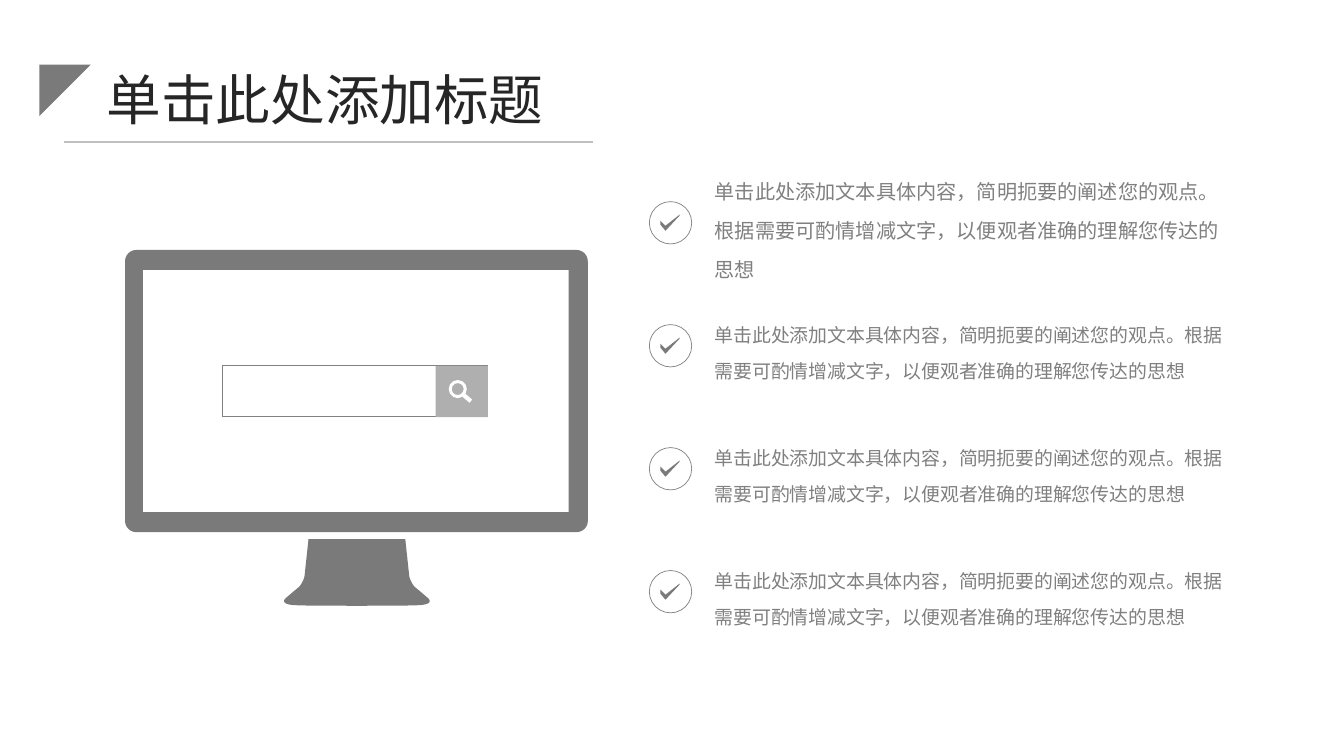
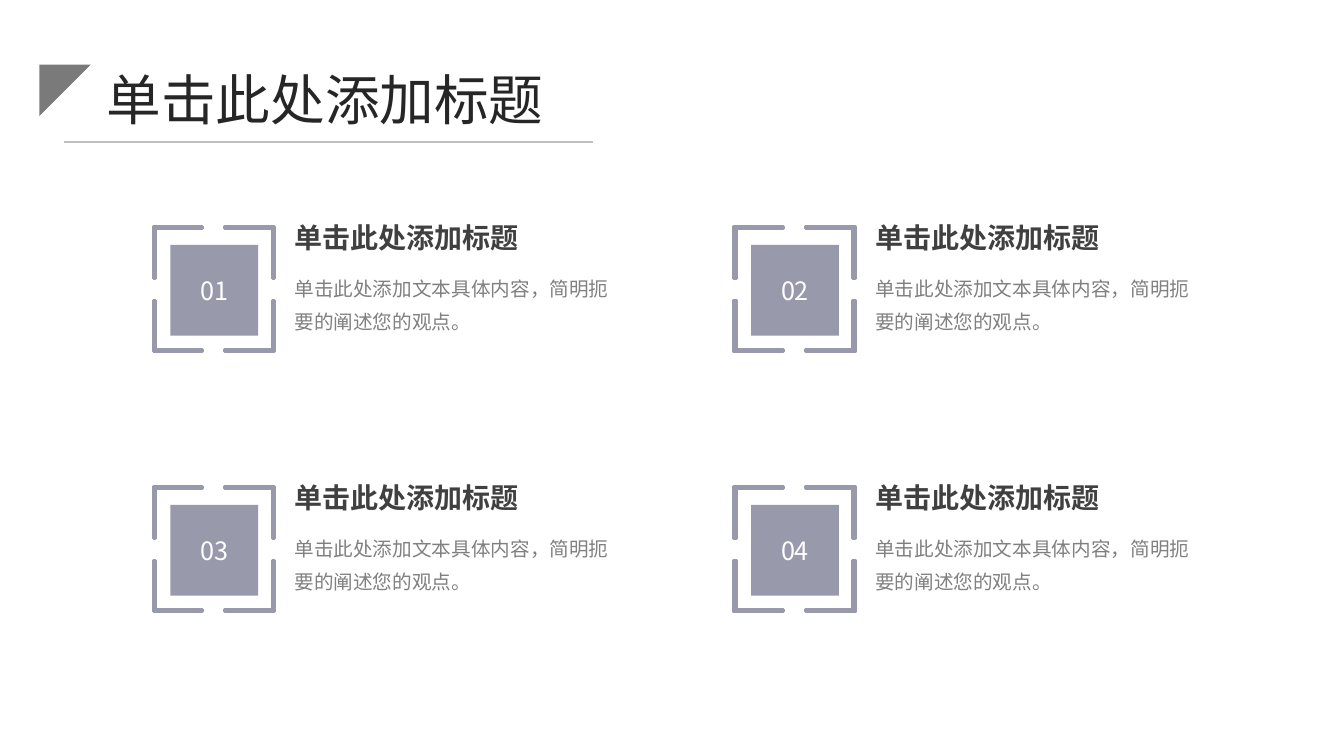
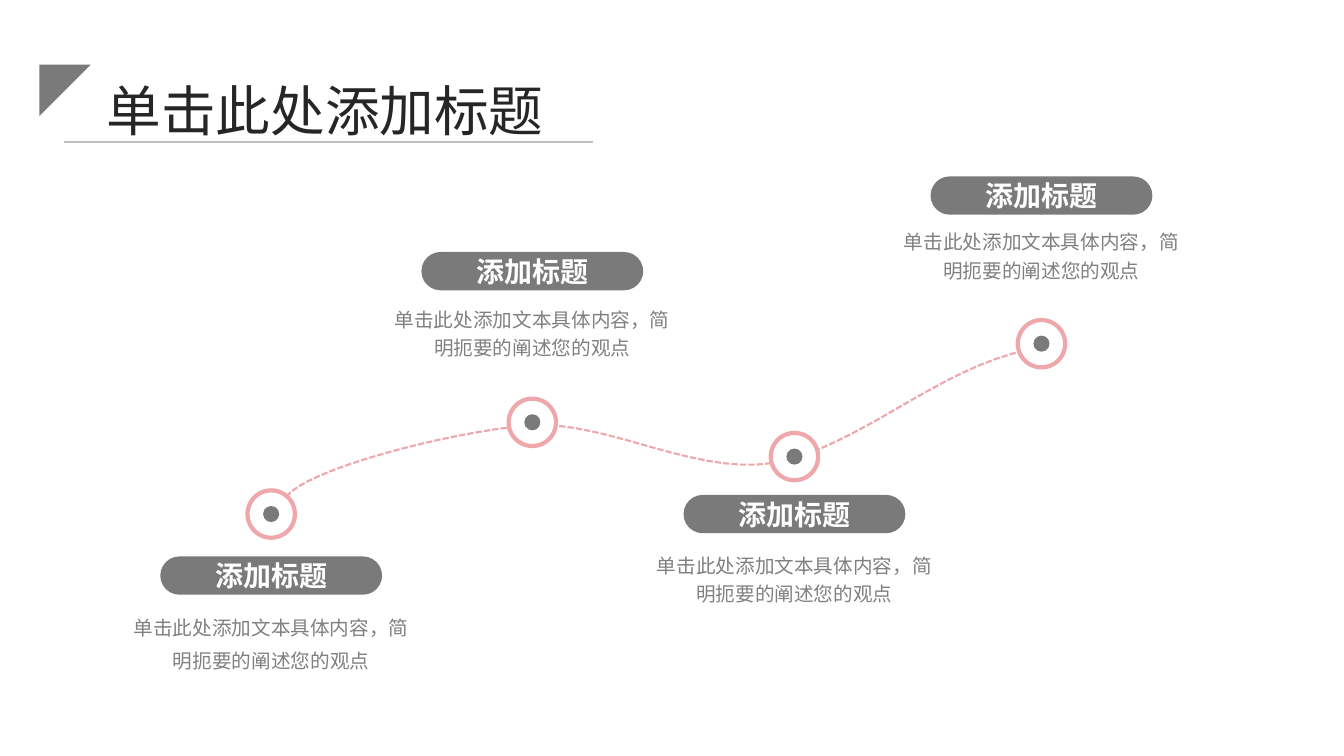
from lxml import etree
from pptx import Presentation
from pptx.dml.color import RGBColor
from pptx.enum.dml import MSO_LINE
from pptx.enum.shapes import MSO_CONNECTOR, MSO_SHAPE as SHAPE
from pptx.enum.text import MSO_ANCHOR as ANCHOR, PP_ALIGN as ALIGN
from pptx.oxml.ns import qn
from pptx.util import Inches, Pt

FONT = "Noto Sans CJK SC"
COLORS = {
    "white": "FFFFFF",
    "title": "262626",
    "heading": "404040",
    "body": "808080",
    "dark": "7A7A7A",
    "button": "AFAFAF",
    "rule": "BFBFBF",
    "slate": "989AAC",
    "pink": "EEA7AA",
}
TITLE = "单击此处添加标题"
LABEL = "添加标题"
SHORT_TEXT = "单击此处添加文本具体内容，简明扼要的阐述您的观点"
LONG_TEXT = SHORT_TEXT + "。根据需要可酌情增减文字，以便观者准确的理解您传达的思想"


def rgb(name):
    return RGBColor.from_string(COLORS[name])


def paint(shape, fill=None, line=None, width=1.0):
    shape.shadow.inherit = False
    if fill:
        shape.fill.solid()
        shape.fill.fore_color.rgb = rgb(fill)
    else:
        shape.fill.background()
    if line:
        shape.line.color.rgb = rgb(line)
        shape.line.width = Pt(width)
    else:
        shape.line.fill.background()
    return shape


def add_preset(slide, kind, x, y, w, h, fill=None, line=None, width=1.0):
    shape = slide.shapes.add_shape(kind, Inches(x), Inches(y), Inches(w), Inches(h))
    return paint(shape, fill, line, width)


def add_circle(slide, cx, cy, diameter, fill=None, line=None, width=1.0):
    radius = diameter / 2
    return add_preset(slide, SHAPE.OVAL, cx - radius, cy - radius,
                      diameter, diameter, fill, line, width)


def add_outline(slide, contours, closed=True):
    """Make one freeform from lists of points in inches."""
    contours = [[(Inches(x), Inches(y)) for x, y in points] for points in contours]
    builder = slide.shapes.build_freeform(*contours[0][0])
    for index, points in enumerate(contours):
        if index:
            builder.move_to(*points[0])
        builder.add_line_segments(points[1:], close=closed)
    return builder.convert_to_shape()


def trace_curves(start, curves, steps=16):
    """Return points along joined cubic curves (control, control, end)."""
    points = [start]
    for c1, c2, end in curves:
        p0 = points[-1]
        for step in range(1, steps + 1):
            t = step / steps
            u = 1 - t
            points.append(tuple(
                u**3 * a + 3 * u * u * t * b + 3 * u * t * t * c + t**3 * d
                for a, b, c, d in zip(p0, c1, c2, end)))
    return points


def add_line(slide, start, end, color, width):
    line = slide.shapes.add_connector(
        MSO_CONNECTOR.STRAIGHT, *(Inches(value) for value in (*start, *end)))
    line.line.color.rgb = rgb(color)
    line.line.width = Pt(width)
    etree.SubElement(line._element.spPr, qn("a:effectLst"))


def write(shape, text, size, color, bold=False, align=ALIGN.LEFT,
          anchor=ANCHOR.TOP, inset=(0, 0), spacing=None, before=None):
    frame = shape.text_frame
    frame.word_wrap = True
    frame.vertical_anchor = anchor
    frame.margin_left = frame.margin_right = Inches(inset[0])
    frame.margin_top = frame.margin_bottom = Inches(inset[1])
    paragraph = frame.paragraphs[0]
    paragraph.alignment = align
    if spacing:
        paragraph.line_spacing = spacing
    if before:
        paragraph.space_before = Pt(before)
    run = paragraph.add_run()
    run.text = text
    font = run.font
    font.size, font.bold, font.name = Pt(size), bold, FONT
    font.color.rgb = rgb(color)
    east_asian = etree.Element(qn("a:ea"), typeface=FONT)
    run._r.rPr.find(qn("a:latin")).addnext(east_asian)


def add_text(slide, x, y, w, h, text, size, color, **style):
    box = slide.shapes.add_textbox(Inches(x), Inches(y), Inches(w), Inches(h))
    write(box, text, size, color, **style)


def add_titled_slide(prs, title_top=0.6):
    slide = prs.slides.add_slide(prs.slide_layouts[6])
    corner = add_preset(slide, SHAPE.RIGHT_TRIANGLE, 0.39, 0.64, 0.51, 0.51, "dark")
    corner.rotation = 90
    add_text(slide, 0.39, title_top, 5.67, 0.77, TITLE, 39, "title",
             align=ALIGN.CENTER, inset=(0.1, 0.05))
    add_line(slide, (0.63, 1.41), (5.88, 1.41), "rule", 1)
    return slide


def add_monitor(slide):
    case = add_preset(slide, SHAPE.ROUNDED_RECTANGLE, 1.24, 2.48, 4.59, 2.8, "dark")
    case.adjustments[0] = 0.04
    add_preset(slide, SHAPE.RECTANGLE, 1.42, 2.68, 4.22, 2.4, "white")

    center = 3.54
    right = [(4.02, 5.35)] + trace_curves((4.06, 5.72), [
        ((4.06, 5.72), (4.07, 5.77), (4.11, 5.82)),
        ((4.16, 5.86), (4.24, 5.93), (4.24, 5.93)),
        ((4.24, 5.93), (4.31, 5.98), (4.2, 6)),
        ((4.14, 6.01), (3.87, 6.01), (3.64, 6.01)),
    ])
    left = [(2 * center - x, y) for x, y in reversed(right)]
    paint(add_outline(slide, [right + left]), "dark")


def add_search_bar(slide):
    add_preset(slide, SHAPE.RECTANGLE, 2.21, 3.63, 2.62, 0.5, "white", "body", 0.5)
    add_preset(slide, SHAPE.RECTANGLE, 4.32, 3.63, 0.52, 0.51, "button")
    lens = add_preset(slide, SHAPE.DONUT, 4.45, 3.77, 0.18, 0.18, "white")
    lens.adjustments[0] = 0.17
    add_line(slide, (4.6, 3.92), (4.67, 3.98), "white", 3)


def add_check_item(slide, top, size):
    center_x, center_y = 6.65, top + 0.45
    add_circle(slide, center_x, center_y, 0.42, line="body", width=0.5)
    tick = [(-0.1, 0.02), (-0.05, 0.08), (0.09, -0.07),
            (0.09, -0.08), (-0.05, 0.03), (-0.1, -0.02)]
    paint(add_outline(slide, [[(center_x + x, center_y + y) for x, y in tick]]), "dark")
    add_text(slide, 6.99, top, 5.38, 0.91, LONG_TEXT, size, "body",
             anchor=ANCHOR.MIDDLE, inset=(0.1, 0.05), spacing=1.6, before=10)


def add_bracket_frame(slide, x, y):
    """Draw four corner brackets by mirroring the top left one."""
    width, height = 1.2, 1.24
    corner = [(0, 0), (0.49, 0), (0.49, 0.02), (0.02, 0.02), (0.02, 0.51), (0, 0.51)]
    contours = [
        [(x + (width - dx if flip_x else dx), y + (height - dy if flip_y else dy))
         for dx, dy in corner]
        for flip_x in (False, True) for flip_y in (False, True)
    ]
    paint(add_outline(slide, contours), "slate", "slate", 2.25)


def add_numbered_item(slide, x, y, number):
    tile = add_preset(slide, SHAPE.RECTANGLE, x + 0.17, y + 0.18, 0.87, 0.9, "slate")
    write(tile, f"{number:02}", 18, "white", align=ALIGN.CENTER, anchor=ANCHOR.MIDDLE)
    add_bracket_frame(slide, x, y)
    add_text(slide, x + 1.4, y - 0.15, 3.13, 0.51, TITLE, 20, "heading",
             bold=True, anchor=ANCHOR.MIDDLE)
    add_text(slide, x + 1.4, y + 0.4, 3.13, 1.27, SHORT_TEXT + "。", 14, "body",
             spacing=1.4)


def add_milestone(slide, x, node_y, label_top, text_top, spacing):
    add_circle(slide, x, node_y, 0.47, "white", "pink", 3)
    add_circle(slide, x, node_y, 0.16, "dark")
    label = add_preset(slide, SHAPE.ROUNDED_RECTANGLE, x - 1.1, label_top, 2.2, 0.38, "dark")
    label.adjustments[0] = 0.5
    write(label, LABEL, 20, "white", bold=True, align=ALIGN.CENTER, anchor=ANCHOR.MIDDLE)
    add_text(slide, x - 1.42, text_top, 2.84, 0.84, SHORT_TEXT, 14, "body",
             align=ALIGN.CENTER, inset=(0, 0.05), spacing=spacing)


def build_checklist(prs):
    slide = add_titled_slide(prs)
    add_monitor(slide)
    add_search_bar(slide)
    for row, size in enumerate((14.4, 13.5, 13.5, 13.5)):
        add_check_item(slide, 1.76 + 1.22 * row, size)


def build_numbered_grid(prs):
    slide = add_titled_slide(prs)
    for index in range(4):
        row, column = divmod(index, 2)
        add_numbered_item(slide, 1.52 + 5.76 * column, 2.25 + 2.58 * row, index + 1)


def build_timeline(prs):
    slide = add_titled_slide(prs, title_top=0.71)
    route = trace_curves((2.84, 4.93), [
        ((3.01, 4.67), (4.41, 4.29), (5.24, 4.22)),
        ((6.07, 4.16), (6.98, 4.79), (7.82, 4.56)),
        ((8.67, 4.33), (9.45, 3.54), (10.39, 3.44)),
    ])
    curve = paint(add_outline(slide, [route], closed=False), line="pink", width=1.5)
    curve.line.dash_style = MSO_LINE.SQUARE_DOT
    milestones = [
        (2.69, 5.1, 5.52, 5.97, 1.4),
        (5.28, 4.19, 2.5, 2.96, 1.2),
        (7.88, 4.53, 4.91, 5.4, 1.2),
        (10.33, 3.41, 1.75, 2.19, 1.2),
    ]
    for milestone in milestones:
        add_milestone(slide, *milestone)


def main():
    prs = Presentation()
    prs.slide_width, prs.slide_height = Inches(13.33), Inches(7.5)
    build_checklist(prs)
    build_numbered_grid(prs)
    build_timeline(prs)
    prs.save("out.pptx")


if __name__ == "__main__":
    main()
